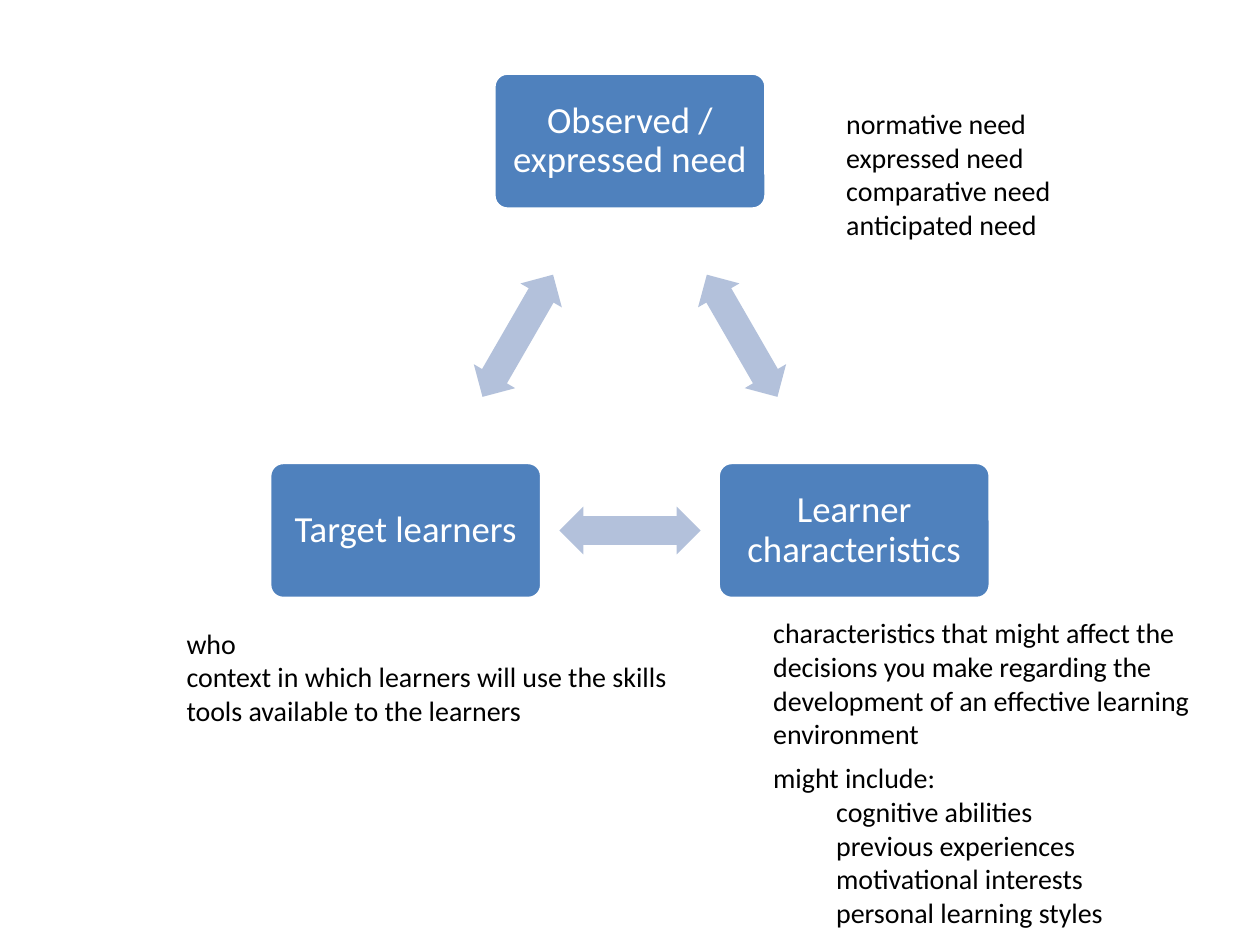
from dataclasses import dataclass
from math import atan2, degrees

from pptx import Presentation
from pptx.dml.color import RGBColor
from pptx.enum.shapes import MSO_SHAPE
from pptx.enum.text import MSO_ANCHOR, PP_ALIGN
from pptx.shapes.autoshape import Shape
from pptx.slide import Slide
from pptx.util import Inches, Pt

ROUND = MSO_SHAPE.ROUNDED_RECTANGLE
ARROW = MSO_SHAPE.LEFT_RIGHT_ARROW
MIDDLE = MSO_ANCHOR.MIDDLE
LEFT, CENTER = PP_ALIGN.LEFT, PP_ALIGN.CENTER

COLORS = {"node": "4F81BD", "arrow": "B3C1DB", "white": "FFFFFF", "black": "000000"}
FONT = "Calibri"
NODE_W, NODE_H = 2.16, 1.08
ARROW_W, ARROW_H = 1.12, 0.38


@dataclass
class Node:
    x: float  # centre
    y: float
    text: str


@dataclass
class Line:
    text: str
    level: int = 0
    gap: int = 0  # points above


@dataclass
class Note:
    left: float
    top: float
    width: float
    height: float
    lines: list[Line]


NODES = [
    Node(5, 1.12, "Observed / expressed need"),
    Node(6.78, 4.21, "Learner characteristics"),
    Node(3.22, 4.21, "Target learners"),
]

NOTES = [
    Note(5.92, 4.92, 3.92, 2.42, [
        Line("characteristics that might affect the decisions you make regarding "
             "the development of an effective learning environment"),
        Line("might include:", gap=6),
        Line("cognitive abilities", 1),
        Line("previous experiences", 1),
        Line("motivational interests", 1),
        Line("personal learning styles", 1),
    ]),
    Note(6.5, 0.17, 3.5, 2.42, [
        Line("normative need"),
        Line("expressed need"),
        Line("comparative need"),
        Line("anticipated need"),
    ]),
    Note(1.33, 4.83, 4.33, 1.08, [
        Line("who"),
        Line("context in which learners will use the skills"),
        Line("tools available to the learners"),
    ]),
]


def rgb(name: str) -> RGBColor:
    return RGBColor.from_string(COLORS[name])


def add_box(slide: Slide, kind: MSO_SHAPE, left: float, top: float,
            width: float, height: float, fill: str) -> Shape:
    box = slide.shapes.add_shape(
        kind, Inches(left), Inches(top), Inches(width), Inches(height))
    box.shadow.inherit = False
    box.fill.solid()
    box.fill.fore_color.rgb = rgb(fill)
    return box


def add_edge(box: Shape) -> None:
    box.line.color.rgb = rgb("white")
    box.line.width = Pt(2)


def set_text(box: Shape, lines: list[Line], size: int, color: str,
             align: PP_ALIGN) -> None:
    frame = box.text_frame
    frame.word_wrap = True
    frame.vertical_anchor = MIDDLE
    frame.text = "\n".join(line.text for line in lines)
    for para, line in zip(frame.paragraphs, lines):
        para.alignment = align
        para.level = line.level
        if line.gap:
            para.space_before = Pt(line.gap)
        for run in para.runs:
            run.font.name = FONT
            run.font.size = Pt(size)
            run.font.color.rgb = rgb(color)


def add_node(slide: Slide, node: Node) -> None:
    box = add_box(slide, ROUND, node.x - NODE_W / 2, node.y - NODE_H / 2,
                  NODE_W, NODE_H, "node")
    box.adjustments[0] = 0.1
    add_edge(box)
    set_text(box, [Line(node.text)], 21, "white", CENTER)
    frame = box.text_frame
    frame.margin_left = frame.margin_right = Inches(0.06)
    frame.margin_top = frame.margin_bottom = Inches(0.06)
    frame.paragraphs[0].line_spacing = 0.9


def add_arrow(slide: Slide, start: Node, end: Node) -> None:
    """Place a double arrow halfway between two nodes, along their axis."""
    x, y = (start.x + end.x) / 2, (start.y + end.y) / 2
    arrow = add_box(slide, ARROW, x - ARROW_W / 2, y - ARROW_H / 2,
                    ARROW_W, ARROW_H, "arrow")
    arrow.line.fill.background()
    arrow.adjustments[0] = 0.6
    arrow.adjustments[1] = 0.5
    arrow.rotation = round(degrees(atan2(end.y - start.y, end.x - start.x))) % 360


def add_note(slide: Slide, note: Note) -> None:
    box = add_box(slide, ROUND, note.left, note.top, note.width, note.height, "white")
    add_edge(box)
    set_text(box, note.lines, 16, "black", LEFT)


def main() -> None:
    deck = Presentation()
    deck.slide_width, deck.slide_height = Inches(10), Inches(7.5)
    slide = deck.slides.add_slide(deck.slide_layouts[6])

    # Cycle of nodes, each joined to the next
    for node, after in zip(NODES, NODES[1:] + NODES[:1]):
        add_node(slide, node)
        add_arrow(slide, node, after)

    # Notes beside the nodes
    for note in NOTES:
        add_note(slide, note)

    deck.save("out.pptx")


if __name__ == "__main__":
    main()
